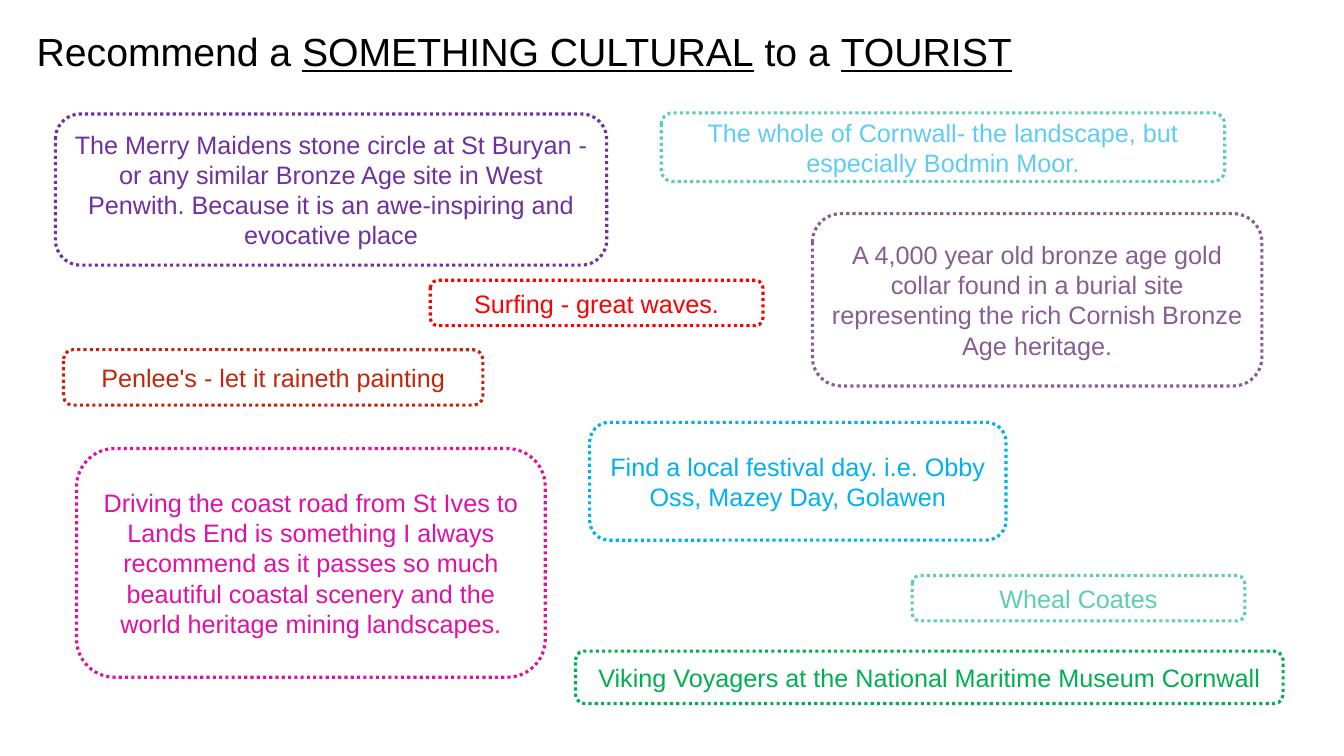
from pptx import Presentation
from pptx.dml.color import RGBColor
from pptx.enum.dml import MSO_LINE
from pptx.enum.shapes import MSO_SHAPE
from pptx.enum.text import MSO_ANCHOR, MSO_AUTO_SIZE, PP_ALIGN
from pptx.util import Pt

ROUNDED = MSO_SHAPE.ROUNDED_RECTANGLE
DOTTED = MSO_LINE.ROUND_DOT
TOP, MIDDLE = MSO_ANCHOR.TOP, MSO_ANCHOR.MIDDLE
LEFT, CENTER = PP_ALIGN.LEFT, PP_ALIGN.CENTER
GROW = MSO_AUTO_SIZE.SHAPE_TO_FIT_TEXT

THEME = {
    "font": "Arial",
    "title_size": Pt(28),
    "body_size": Pt(18),
    "border": Pt(2.25),
    "black": RGBColor(0x00, 0x00, 0x00),
    "purple": RGBColor(0x70, 0x30, 0xA0),
    "blue": RGBColor(0x00, 0xB0, 0xF0),
    "red": RGBColor(0xFF, 0x00, 0x00),
    "green": RGBColor(0x00, 0xB0, 0x50),
    "mint": RGBColor(0x5D, 0xCE, 0xAF),
    "sky": RGBColor(0x5E, 0xCC, 0xF3),
    "pink": RGBColor(0xDF, 0x11, 0xA4),
    "mauve": RGBColor(0x87, 0x5E, 0x92),
    "rust": RGBColor(0xC3, 0x26, 0x0C),
}


def set_font(p, size, color, align):
    p.alignment = align
    p.font.name = THEME["font"]
    p.font.size = THEME[size]
    p.font.color.rgb = THEME[color]


prs = Presentation()
prs.slide_width, prs.slide_height = Pt(960), Pt(540)
s = prs.slides.add_slide(prs.slide_layouts[5])

# Title with underlined key words
title = s.shapes.title
title.left, title.top, title.width, title.height = Pt(19), Pt(16), Pt(718), Pt(41)
tf = title.text_frame
tf.word_wrap = False
tf.auto_size = GROW
tf.vertical_anchor = TOP
p = tf.paragraphs[0]
set_font(p, "title_size", "black", LEFT)
for text, underlined in [
    ("Recommend a ", False),
    ("SOMETHING CULTURAL", True),
    (" to a ", False),
    ("TOURIST", True),
]:
    r = p.add_run()
    r.text = text
    r.font.underline = underlined

# Recommendations: left, top, width, height, border colour, text colour, text
recommendations = [
    (39.6, 81.4, 393.8, 108, "purple", "purple",
     "The Merry Maidens stone circle at St Buryan - or any similar Bronze Age "
     "site in West Penwith. Because it is an awe-inspiring and evocative place"),
    (421.2, 301.7, 297.4, 84.2, "blue", "blue",
     "Find a local festival day. i.e. Obby Oss, Mazey Day, Golawen"),
    (307.4, 200.2, 237.6, 32.4, "red", "red", "Surfing - great waves."),
    (411.1, 465.1, 505.4, 37.4, "green", "green",
     "Viking Voyagers at the National Maritime Museum Cornwall"),
    (472.3, 80.6, 402.5, 49, "mint", "sky",
     "The whole of Cornwall- the landscape, but especially Bodmin Moor."),
    (54.7, 320.4, 334.8, 163.4, "pink", "pink",
     "Driving the coast road from St Ives to Lands End is something I always "
     "recommend as it passes so much beautiful coastal scenery and the world "
     "heritage mining landscapes."),
    (580.3, 152.6, 321.1, 123.1, "mauve", "mauve",
     "A 4,000 year old bronze age gold collar found in a burial site "
     "representing the rich Cornish Bronze Age heritage."),
    (651.6, 411.1, 237.6, 32.4, "mint", "mint", "Wheal Coates"),
    (45.4, 249.8, 299.5, 39.6, "rust", "rust", "Penlee's - let it raineth painting"),
]
for left, top, width, height, border, color, text in recommendations:
    sp = s.shapes.add_shape(ROUNDED, Pt(left), Pt(top), Pt(width), Pt(height))
    sp.shadow.inherit = False
    sp.fill.background()
    sp.line.color.rgb = THEME[border]
    sp.line.width = THEME["border"]
    sp.line.dash_style = DOTTED
    tf = sp.text_frame
    tf.word_wrap = True
    tf.vertical_anchor = MIDDLE
    p = tf.paragraphs[0]
    p.text = text
    set_font(p, "body_size", color, CENTER)

prs.save("out.pptx")
